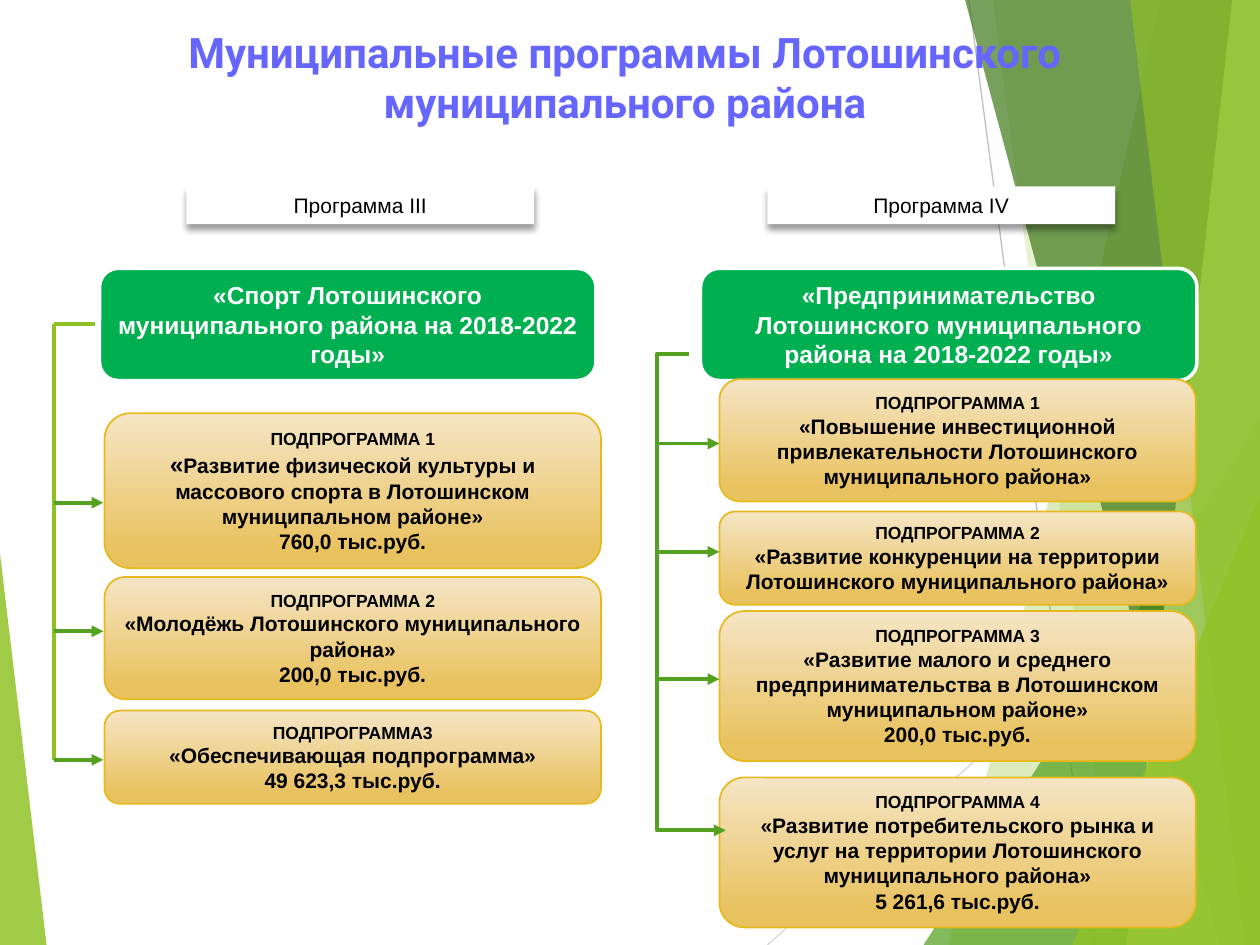
"""Build a slide of two municipal programmes with their subprogrammes."""
from lxml import etree
from pptx import Presentation
from pptx import util as u
from pptx.dml.color import RGBColor
from pptx.enum import shapes, text
from pptx.oxml.ns import qn

Inches, Pt = u.Inches, u.Pt
MSO = shapes.MSO_SHAPE
COLORS = {
    "title": "6666FF", "white": "FFFFFF", "black": "000000",
    "program": "00B050", "gold_light": "F5E5C5", "gold": "E9C260",
    "gold_line": "E6B91E", "green": "54A021", "lime": "90C226",
    "dark": "3F7819", "pale": "C0E474", "gray": "BFBFBF", "silver": "D9D9D9",
}
RGB = {name: RGBColor.from_string(value) for name, value in COLORS.items()}


def add_line(x1, y1, x2, y2, color, width=2.25, arrow=False, bend=None):
    kind = shapes.MSO_CONNECTOR.STRAIGHT if bend is None else shapes.MSO_CONNECTOR.ELBOW
    c = s.shapes.add_connector(kind, Inches(x1), Inches(y1), Inches(x2), Inches(y2))
    c.line.color.rgb = RGB[color]
    c.line.width = Pt(width)
    spPr = c._element.spPr
    if arrow:
        etree.SubElement(c.line._get_or_add_ln(), qn("a:tailEnd"), type="triangle")
    if bend is not None:
        guides = spPr.find(qn("a:prstGeom")).get_or_add_avLst()
        etree.SubElement(guides, qn("a:gd"), name="adj1", fmla=f"val {bend}")
    etree.SubElement(spPr, qn("a:effectLst"))


def add_box(kind, x, y, w, h, paragraphs, color, bold=True):
    sp = s.shapes.add_shape(kind, Inches(x), Inches(y), Inches(w), Inches(h))
    sp.shadow.inherit = False
    tf = sp.text_frame
    tf.word_wrap = True
    tf.vertical_anchor = text.MSO_ANCHOR.MIDDLE
    for i, (words, size) in enumerate(paragraphs):
        p = tf.paragraphs[0] if i == 0 else tf.add_paragraph()
        p.text = words
        p.alignment = text.PP_ALIGN.CENTER
        p.font.name, p.font.size, p.font.bold = "Arial", Pt(size), bold
        p.font.color.rgb = RGB[color]
    return sp


prs = Presentation()
prs.slide_width, prs.slide_height = Inches(10), Inches(7.5)
s = prs.slides.add_slide(prs.slide_layouts[5])

add_line(7.69, 0, 8.69, 7.5, "gray", 0.75)
add_line(10, 4.03, 6.09, 7.5, "silver", 0.75)

decorations = [
    ([(9.21, 0), (10, 0), (10, 7.5), (7.53, 7.5)], "lime", 30),
    ([(7.88, 0), (10, 0), (10, 7.5), (8.87, 7.5)], "lime", 20),
    ([(10, 3.33), (10, 7.5), (7.33, 7.5)], "green", 72),
    ([(7.66, 0), (10, 0), (10, 7.5), (9.68, 7.5)], "dark", 70),
    ([(9.78, 0), (10, 0), (10, 7.5), (8.94, 7.5)], "pale", 70),
    ([(8.97, 0), (10, 0), (10, 7.5), (9.88, 7.5)], "lime", 65),
    ([(10, 3.93), (10, 7.5), (8.51, 7.5)], "lime", 80),
    ([(0, 4.39), (0.37, 7.5), (0, 7.5)], "lime", 85),
]
for points, color, alpha in decorations:
    if len(points) == 3:
        xs, ys = zip(*points)
        sp = s.shapes.add_shape(
            MSO.ISOSCELES_TRIANGLE, Inches(min(xs)), Inches(min(ys)),
            Inches(max(xs) - min(xs)), Inches(max(ys) - min(ys)))
        sp.adjustments[0] = 1 if points[0][0] == 10 else 0
    else:
        corners = [(Inches(x), Inches(y)) for x, y in points]
        fb = s.shapes.build_freeform(*corners[0])
        fb.add_line_segments(corners[1:])
        sp = fb.convert_to_shape()
    sp.shadow.inherit = False
    sp.line.fill.background()
    sp.fill.solid()
    sp.fill.fore_color.rgb = RGB[color]
    clr = sp._element.spPr.find(qn("a:solidFill"))[0]
    etree.SubElement(clr, qn("a:alpha"), val=str(alpha * 1000))

title = s.shapes.title
s.shapes._spTree.append(title._element)
title.left, title.top, title.width, title.height = map(Inches, (0.47, 0.16, 8.98, 0.86))
tf = title.text_frame
tf.text = "Муниципальные программы Лотошинского муниципального района"
tf.word_wrap = True
tf.auto_size = text.MSO_AUTO_SIZE.NONE
tf.vertical_anchor = text.MSO_ANCHOR.TOP
p = tf.paragraphs[0]
p.alignment = text.PP_ALIGN.CENTER
p.font.name, p.font.size, p.font.bold = "Roboto", Pt(24), True
p.font.color.rgb = RGB["title"]

programs = [
    (1.48, "Программа III", 0.79,
     "«Спорт Лотошинского муниципального района на 2018-2022 годы»"),
    (6.09, "Программа IV", 5.56,
     "«Предпринимательство Лотошинского муниципального района на 2018-2022 годы»"),
]
for label_x, label, x, name in programs:
    sp = add_box(MSO.ROUNDED_RECTANGLE, x, 2.13, 3.94, 0.89, [(name, 14)], "white")
    sp.fill.solid()
    sp.fill.fore_color.rgb = RGB["program"]
    sp.line.color.rgb = RGB["white"]
    sp.line.width = Pt(2)

    sp = add_box(MSO.RECTANGLE, label_x, 1.48, 2.76, 0.3, [(label, 12)], "black", False)
    sp.fill.solid()
    sp.fill.fore_color.rgb = RGB["white"]
    sp.line.fill.background()
    shadow = etree.SubElement(
        sp._element.spPr.find(qn("a:effectLst")), qn("a:outerShdw"),
        blurRad=str(Pt(4)), dist=str(Pt(3)), dir="5400000", rotWithShape="0")
    clr = etree.SubElement(shadow, qn("a:srgbClr"), val=COLORS["black"])
    etree.SubElement(clr, qn("a:alpha"), val="40000")

subprograms = [
    (0.83, 3.28, 3.94, 1.23, "ПОДПРОГРАММА 1",
     "«Развитие физической культуры и массового спорта в Лотошинском муниципальном районе»",
     "760,0 тыс.руб."),
    (0.83, 4.58, 3.94, 0.97, "ПОДПРОГРАММА 2",
     "«Молодёжь Лотошинского муниципального района»", "200,0 тыс.руб."),
    (0.83, 5.64, 3.94, 0.74, "ПОДПРОГРАММА3",
     "«Обеспечивающая подпрограмма»", "49 623,3 тыс.руб."),
    (5.71, 3.01, 3.78, 0.97, "ПОДПРОГРАММА 1",
     "«Повышение инвестиционной привлекательности Лотошинского муниципального района»"),
    (5.71, 4.06, 3.78, 0.74, "ПОДПРОГРАММА 2",
     "«Развитие конкуренции на территории Лотошинского муниципального района»"),
    (5.71, 4.85, 3.78, 1.19, "ПОДПРОГРАММА 3",
     "«Развитие малого и среднего предпринимательства в Лотошинском муниципальном районе»",
     "200,0 тыс.руб."),
    (5.71, 6.17, 3.78, 1.19, "ПОДПРОГРАММА 4",
     "«Развитие потребительского рынка и услуг на территории Лотошинского муниципального района»",
     "5 261,6 тыс.руб."),
]
for x, y, w, h, heading, *details in subprograms:
    paragraphs = [(heading, 10)] + [(words, 12) for words in details]
    sp = add_box(MSO.ROUNDED_RECTANGLE, x, y, w, h, paragraphs, "black")
    sp.fill.gradient()
    sp.fill.gradient_angle = 270
    for stop, color, position in zip(sp.fill.gradient_stops, ("gold_light", "gold"), (0, 0.88)):
        stop.color.rgb = RGB[color]
        stop.position = position
    sp.line.color.rgb = RGB["gold_line"]
    sp.line.width = Pt(1)
    if "физической" in details[0]:
        p = sp.text_frame.paragraphs[1]
        p.runs[0].text = "«"
        p.runs[0].font.size = Pt(14)
        p.add_run().text = details[0][1:]

add_line(0.43, 2.57, 0.43, 6.03, "lime")
add_line(0.43, 2.57, 0.75, 2.57, "lime")
add_line(5.47, 2.81, 5.76, 6.59, "green", arrow=True, bend=-87000)
for x1, x2, levels in ((0.43, 0.82, (3.99, 5.01, 6.03)), (5.23, 5.71, (3.52, 4.38, 5.39))):
    for y in levels:
        add_line(x1, y, x2, y, "green", arrow=True)

prs.save("out.pptx")
